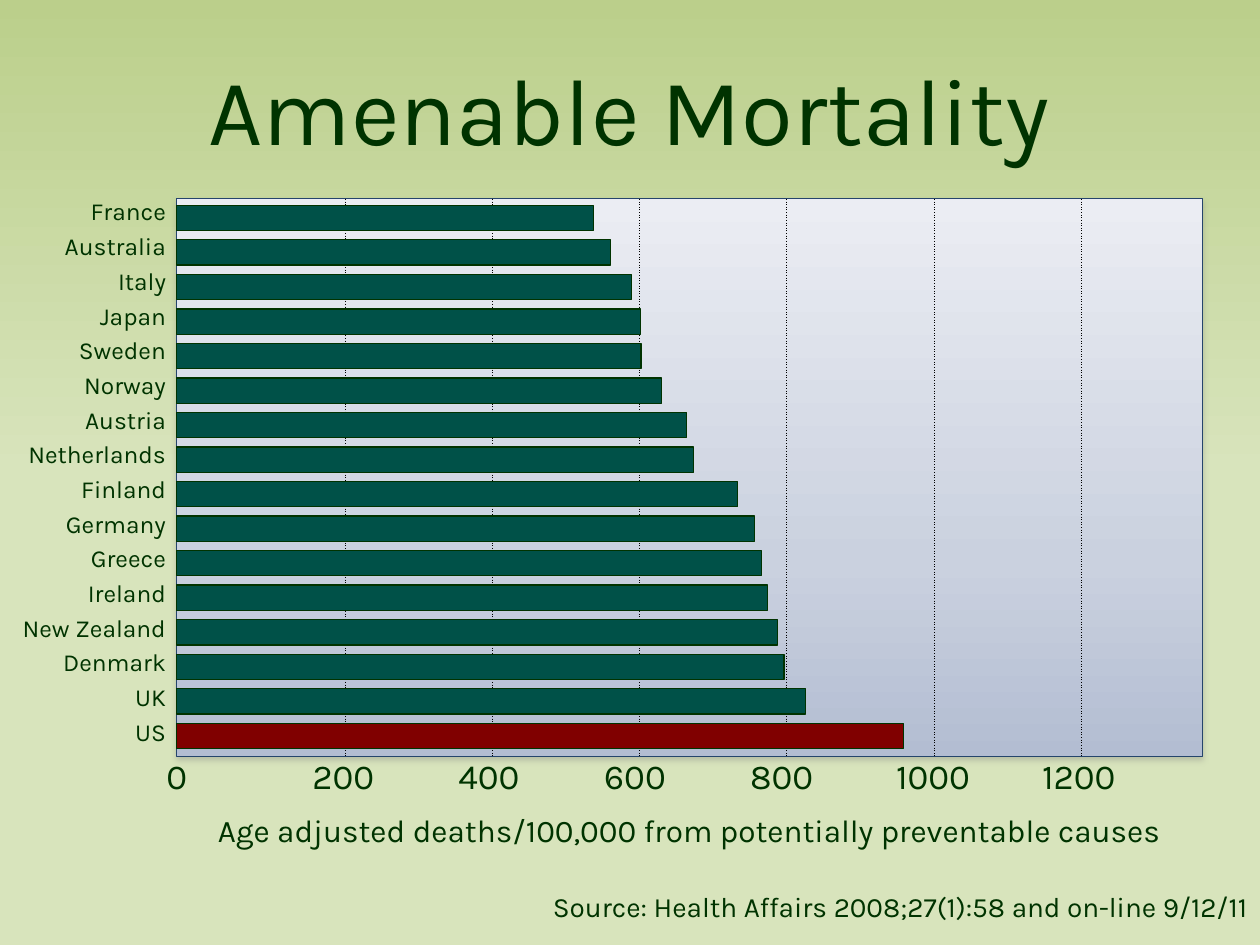
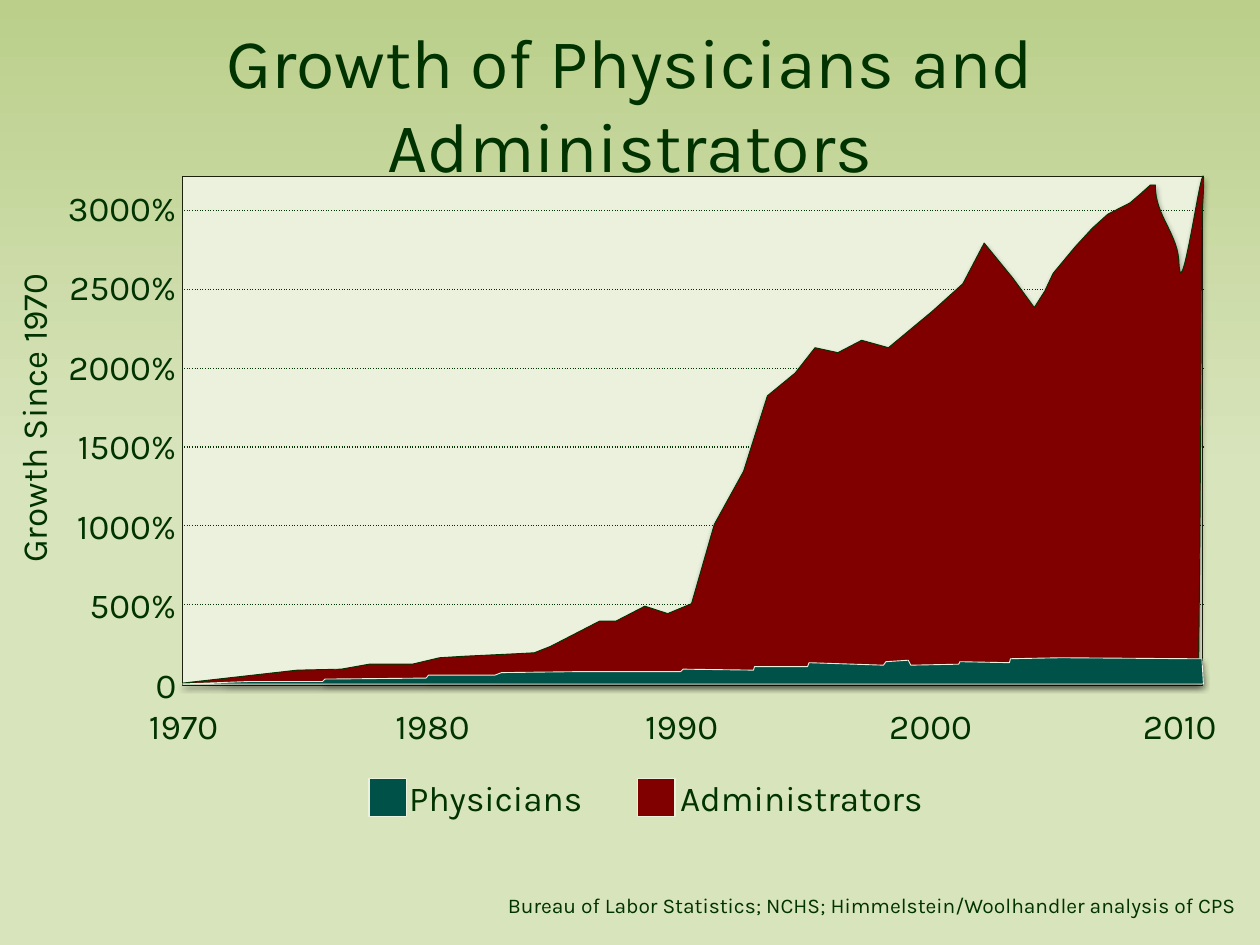
from copy import deepcopy

from lxml.etree import SubElement
from pptx import Presentation
from pptx.dml.color import RGBColor
from pptx.enum.shapes import MSO_SHAPE
from pptx.enum.text import MSO_ANCHOR, PP_ALIGN
from pptx.oxml import parse_xml
from pptx.oxml.ns import nsdecls, qn
from pptx.util import Cm, Pt

FONT = "Karla"
INK = RGBColor(0x00, 0x33, 0x00)
TEAL = RGBColor(0x00, 0x51, 0x48)
MAROON = RGBColor(0x80, 0x00, 0x00)
CREAM = RGBColor(0xEB, 0xF1, 0xDD)
OLIVE = RGBColor(0x1B, 0x21, 0x0D)
NAVY = RGBColor(0x25, 0x45, 0x6C)
GRAY = RGBColor(0x80, 0x80, 0x80)
BLACK = RGBColor(0x00, 0x00, 0x00)
BACKGROUND = [(0, RGBColor(0xBB, 0xCF, 0x8B)), (0.5, RGBColor(0xD8, 0xE4, 0xBC)),
              (1, RGBColor(0xD8, 0xE4, 0xBC))]
PANEL = [(0, RGBColor(0xEB, 0xED, 0xF3)), (0.65, RGBColor(0xCA, 0xD1, 0xDF)),
         (1, RGBColor(0xB3, 0xBD, 0xD2))]
NO_TABLE_STYLE = "{2D5ABB26-0587-4C30-8999-92F81FD0307C}"

DEATHS = [
    ("France", 537), ("Australia", 560), ("Italy", 589), ("Japan", 601),
    ("Sweden", 602), ("Norway", 630), ("Austria", 664), ("Netherlands", 673),
    ("Finland", 733), ("Germany", 756), ("Greece", 765), ("Ireland", 774),
    ("New Zealand", 787), ("Denmark", 796), ("UK", 825), ("US", 958),
]
DEATH_TICKS = [str(value) for value in range(0, 1201, 200)]
GROWTH_TICKS = [f"{value}%" if value else "0" for value in range(3000, -1, -500)]
YEAR_TICKS = [str(year) for year in range(1970, 2011, 10)]

ADMINISTRATORS = [
    (3.68, 13.77), (5.99, 13.51), (6.88, 13.49), (7.44, 13.39), (8.31, 13.39),
    (8.86, 13.26), (9.35, 13.23), (10.39, 13.18), (10.77, 13.16), (11.1, 13.03),
    (12.09, 12.52), (12.42, 12.52), (13, 12.22), (13.46, 12.37), (13.94, 12.17),
    (14.4, 10.57), (14.99, 9.5), (15.47, 7.98), (16.03, 7.52), (16.43, 7.01),
    (16.89, 7.11), (17.37, 6.86), (17.91, 7.01), (18.8, 6.27), (19.41, 5.72),
    (19.84, 4.9), (20.42, 5.61), (20.85, 6.2), (21.06, 5.87), (21.23, 5.51),
    (21.67, 4.98), (22.02, 4.6), (22.33, 4.32), (22.78, 4.09), (22.99, 3.91),
    (23.19, 3.73), (23.29, 3.73),
]
LATEST_CURVES = [
    [(23.29, 4.39), (23.77, 4.7), (23.77, 5.36)],
    [(23.83, 6.27), (24.33, 2.44), (24.26, 3.86)],
    [(24.18, 5.26), (24.26, 4.17), (24.16, 13.77)],
]
PHYSICIANS = [
    (3.66, 13.79), (24.26, 13.79), (24.23, 13.28), (24, 13.28), (21.39, 13.26),
    (20.37, 13.28), (20.35, 13.36), (19.35, 13.34), (19.33, 13.39), (18.36, 13.41),
    (18.31, 13.31), (17.86, 13.34), (17.81, 13.41), (16.31, 13.36), (16.28, 13.44),
    (15.21, 13.44), (15.19, 13.51), (13.77, 13.49), (13.72, 13.54), (11.66, 13.54),
    (10.11, 13.56), (9.98, 13.61), (8.64, 13.61), (8.59, 13.67), (6.55, 13.69),
    (6.5, 13.74), (5, 13.74),
]
LEGEND = [("Physicians", TEAL, 7.44, 8.0, 4.52),
          ("Administrators", MAROON, 12.85, 13.46, 6.53)]


def lengths(box):
    return [Cm(value) for value in box]


def set_gradient(fill, element, stops):
    fill.gradient()
    fill.gradient_angle = 270
    stop_list = next(element.iter(qn("a:gsLst")))
    while len(stop_list) < len(stops):
        stop_list.append(deepcopy(stop_list[-1]))
    for stop, (position, color) in zip(fill.gradient_stops, stops):
        stop.position = position
        stop.color.rgb = color


def write_text(paragraph, text, size=20, align=PP_ALIGN.LEFT):
    paragraph.alignment = align
    run = paragraph.add_run()
    run.text = text
    run.font.name = FONT
    run.font.size = Pt(size)
    run.font.color.rgb = INK


def add_text(slide, text, box, anchor=MSO_ANCHOR.TOP, right=0.25, rotation=0, **text_format):
    shape = slide.shapes.add_textbox(*lengths(box))
    shape.rotation = rotation
    frame = shape.text_frame
    frame.word_wrap = True
    frame.vertical_anchor = anchor
    frame.margin_right = Cm(right)
    write_text(frame.paragraphs[0], text, **text_format)


def add_title(slide, text, box, size):
    add_text(slide, text, box, anchor=MSO_ANCHOR.MIDDLE, size=size, align=PP_ALIGN.CENTER)


def add_source(slide, text, box, size, right=0.25):
    add_text(slide, text, box, anchor=MSO_ANCHOR.MIDDLE, right=right, size=size,
             align=PP_ALIGN.RIGHT)


def style_shape(shape, fill, line, line_width=0.75):
    shape.shadow.inherit = False
    if isinstance(fill, list):
        set_gradient(shape.fill, shape.element, fill)
    else:
        shape.fill.solid()
        shape.fill.fore_color.rgb = fill
    shape.line.color.rgb = line
    shape.line.width = Pt(line_width)
    return shape


def add_rectangle(slide, box, fill, line, line_width=0.75):
    shape = slide.shapes.add_shape(MSO_SHAPE.RECTANGLE, *lengths(box))
    return style_shape(shape, fill, line, line_width)


def add_shadow(shape, color, blur):
    effects = shape.element.spPr.find(qn("a:effectLst"))
    shadow = SubElement(effects, qn("a:outerShdw"), blurRad=str(Pt(blur)), dist=str(Pt(2)),
                        dir="5400000", algn="t", rotWithShape="0")
    shade = SubElement(shadow, qn("a:srgbClr"), val=str(color))
    SubElement(shade, qn("a:alpha"), val="38000")


def add_area(slide, points, fill, line):
    corners = [(Cm(x), Cm(y)) for x, y in points]
    builder = slide.shapes.build_freeform(*corners[0], scale=1)
    builder.add_line_segments(corners[1:], close=True)
    add_shadow(style_shape(builder.convert_to_shape(), fill, line, 0.5), BLACK, 3.1)


def curve_points(start, controls, steps=16):
    nodes = [start, *controls]
    weights = (1, 3, 3, 1)
    return [
        tuple(sum(weight * (1 - t) ** (3 - k) * t ** k * node[axis]
                  for k, (weight, node) in enumerate(zip(weights, nodes)))
              for axis in (0, 1))
        for t in (step / steps for step in range(1, steps + 1))
    ]


def add_table(slide, box, rows, anchor=MSO_ANCHOR.TOP, padding=0.13, **text_format):
    left, top, width, height = lengths(box)
    row_count, column_count = len(rows), len(rows[0])
    table = slide.shapes.add_table(row_count, column_count, left, top, width, height).table
    table.first_row = table.horz_banding = False
    next(table._tbl.iter(qn("a:tableStyleId"))).text = NO_TABLE_STYLE
    for column in table.columns:
        column.width = width // column_count
    for row, texts in zip(table.rows, rows):
        row.height = height // row_count
        for cell, text in zip(row.cells, texts):
            cell.fill.background()
            cell.vertical_anchor = anchor
            cell.margin_top = cell.margin_bottom = Cm(padding)
            if text:
                write_text(cell.text_frame.paragraphs[0], text, **text_format)
    return table


def dot_edges(cell, edges, color):
    properties = cell._tc.get_or_add_tcPr()
    for index, edge in enumerate(edges):
        properties.insert(index, parse_xml(
            f'<a:{edge} {nsdecls("a")} w="{Pt(0.75)}"><a:solidFill><a:srgbClr val="{color}"/>'
            f'</a:solidFill><a:prstDash val="sysDot"/></a:{edge}>'))


def add_slide(presentation):
    slide = presentation.slides.add_slide(presentation.slide_layouts[6])
    set_gradient(slide.background.fill, slide.element, BACKGROUND)
    return slide


def build_mortality(presentation):
    slide = add_slide(presentation)
    add_source(slide, "Source: Health Affairs 2008;27(1):58 and on-line 9/12/11",
               (10.87, 17.81, 14.53, 0.94), 16)
    add_title(slide, "Amenable Mortality", (0.99, 0.69, 23.39, 2.97), 54)
    add_table(slide, (3.1, 15.14, 20.6, 1.09), [DEATH_TICKS])
    bar_left, plot_top, plot_height = 3.56, 4.01, 11.25
    panel = add_rectangle(slide, (bar_left, plot_top, 20.68, plot_height), PANEL, NAVY, 0.5)
    add_shadow(panel, GRAY, 3.5)
    add_table(slide, (0.15, 3.94, 3.45, 11.2), [[country] for country, _ in DEATHS],
              anchor=MSO_ANCHOR.MIDDLE, padding=0, size=14, align=PP_ALIGN.RIGHT)
    add_text(slide, "Age adjusted deaths/100,000 from potentially preventable causes",
             (3.53, 16.23, 20.73, 1.02), size=18, align=PP_ALIGN.CENTER)

    grid_left, grid_width = 3.99, 20.78
    columns = len(DEATH_TICKS)
    grid = add_table(slide, (grid_left, plot_top, grid_width, plot_height), [[""] * columns])
    for index, cell in enumerate(grid.rows[0].cells):
        edges = ["lnL"] * (index > 0) + ["lnR"] * (index < columns - 1)
        dot_edges(cell, edges, BLACK)

    scale = grid_width / columns / 200
    pitch = 10.44 / (len(DEATHS) - 1)
    for index, (country, deaths) in enumerate(DEATHS):
        width = grid_left + deaths * scale - bar_left
        add_rectangle(slide, (bar_left, 4.14 + index * pitch, width, 0.51),
                      MAROON if country == "US" else TEAL, INK)


def build_growth(presentation):
    slide = add_slide(presentation)
    add_rectangle(slide, (3.68, 3.56, 20.57, 10.26), CREAM, OLIVE)
    grid = add_table(slide, (3.71, 4.24, 20.55, 7.95), [[""]] * 5)
    for cell in grid.iter_cells():
        dot_edges(cell, ["lnT", "lnB"], INK)
    add_title(slide, "Growth of Physicians and Administrators", (0, 0.48, 25.4, 3.18), 40)
    add_source(slide, "Bureau of Labor Statistics; NCHS; Himmelstein/Woolhandler analysis of CPS",
               (6.96, 17.86, 18.44, 0.76), 12, right=0.48)
    add_text(slide, "Growth Since 1970", (-2.59, 7.87, 6.53, 1.12), rotation=270,
             align=PP_ALIGN.CENTER)
    for name, color, swatch_left, text_left, text_width in LEGEND:
        add_rectangle(slide, (swatch_left, 15.7, 0.76, 0.76), color, CREAM)
        add_text(slide, name, (text_left, 15.52, text_width, 1.12))
    add_table(slide, (0.86, 3.68, 2.95, 11.23), [[tick] for tick in GROWTH_TICKS],
              align=PP_ALIGN.RIGHT)
    add_table(slide, (1.19, 14.12, 25.1, 1.09), [YEAR_TICKS], align=PP_ALIGN.CENTER)

    outline = list(ADMINISTRATORS)
    for controls in LATEST_CURVES:
        outline += curve_points(outline[-1], controls)
    add_area(slide, outline, MAROON, INK)
    add_area(slide, PHYSICIANS, TEAL, CREAM)


def main():
    presentation = Presentation()
    presentation.slide_width = Cm(25.4)
    presentation.slide_height = Cm(19.05)
    build_mortality(presentation)
    build_growth(presentation)
    presentation.save("out.pptx")


if __name__ == "__main__":
    main()
